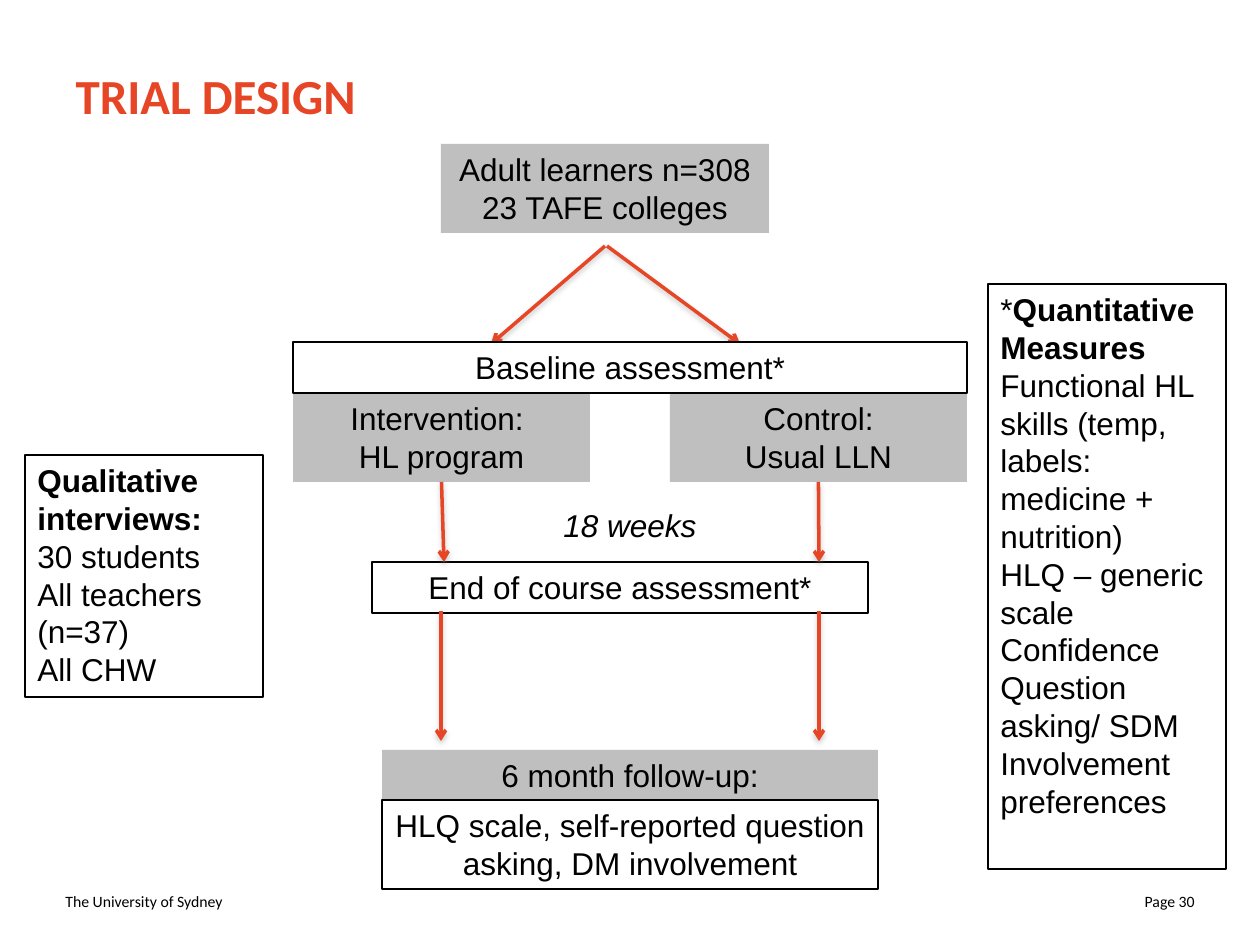
import pptx
import pptx.util
import pptx.dml.color
import pptx.enum.shapes
import pptx.enum.text
import pptx.oxml

EMU_PER_PX = 914400 / 126
ORANGE, GREY, WHITE, BLACK = "E64626", "BFBFBF", "FFFFFF", "000000"
LEFT, CENTER, RIGHT = (pptx.enum.text.PP_ALIGN.LEFT, pptx.enum.text.PP_ALIGN.CENTER,
                       pptx.enum.text.PP_ALIGN.RIGHT)
NAMESPACE = 'xmlns:a="http://schemas.openxmlformats.org/drawingml/2006/main"'
ARROW_SHADOW = (
    f'<a:effectLst {NAMESPACE}><a:outerShdw blurRad="39400" dist="20300" dir="5400000" '
    'rotWithShape="0"><a:srgbClr val="808080"><a:alpha val="38000"/></a:srgbClr>'
    '</a:outerShdw></a:effectLst>')


def px(length):
    return pptx.util.Emu(round(length * EMU_PER_PX))


def color(value):
    return pptx.dml.color.RGBColor.from_string(value)


def add_run(paragraph, text, size=18, font="Arial", ink=BLACK, bold=False, italic=False):
    run = paragraph.add_run()
    run.text = text
    run.font.size = pptx.util.Pt(size)
    run.font.name = font
    run.font.bold = bold
    run.font.italic = italic
    run.font.color.rgb = color(ink)


def fill_text(frame, paragraphs, align=LEFT, anchor=pptx.enum.text.MSO_ANCHOR.TOP, **style):
    """Each paragraph is a string or a list of (text, run style) pairs."""
    frame.word_wrap = True
    frame.vertical_anchor = anchor
    for index, content in enumerate(paragraphs):
        paragraph = frame.add_paragraph() if index else frame.paragraphs[0]
        paragraph.alignment = align
        runs = [(content, {})] if isinstance(content, str) else content
        for text, run_style in runs:
            add_run(paragraph, text, **{**style, **run_style})


def add_title(slide, text):
    title = slide.shapes.title
    title.left, title.top, title.width, title.height = px(63), px(16), px(1134), px(158)
    fill_text(title.text_frame, [text], anchor=pptx.enum.text.MSO_ANCHOR.MIDDLE,
              size=28, font="Calibri", ink=ORANGE, bold=True)


def add_box(slide, bounds, paragraphs, fill=None, outlined=True, align=CENTER):
    shape = slide.shapes.add_shape(pptx.enum.shapes.MSO_SHAPE.RECTANGLE, *map(px, bounds))
    shape.shadow.inherit = False
    if fill:
        shape.fill.solid()
        shape.fill.fore_color.rgb = color(fill)
    else:
        shape.fill.background()
    if outlined:
        shape.line.color.rgb = color(BLACK)
        shape.line.width = pptx.util.Pt(0.75)
    else:
        shape.line.fill.background()
    fill_text(shape.text_frame, paragraphs, align)
    return shape


def add_label(slide, bounds, text, **style):
    label = slide.shapes.add_textbox(*map(px, bounds))
    fill_text(label.text_frame, [text], **style)


def add_arrow(slide, start, end, source=None):
    arrow = slide.shapes.add_connector(
        pptx.enum.shapes.MSO_CONNECTOR.STRAIGHT, *map(px, start + end))
    if source is not None:
        arrow.begin_connect(source, 2)
    arrow.line.color.rgb = color(ORANGE)
    arrow.line.width = pptx.util.Pt(2)
    arrow.line._get_or_add_ln().append(
        pptx.oxml.parse_xml(f'<a:tailEnd {NAMESPACE} type="arrow"/>'))
    arrow._element.spPr.append(pptx.oxml.parse_xml(ARROW_SHADOW))


def main():
    presentation = pptx.Presentation()
    presentation.slide_width, presentation.slide_height = px(1260), px(945)
    slide = presentation.slides.add_slide(presentation.slide_layouts[5])

    # Title and footer
    add_title(slide, "TRIAL DESIGN")
    for left, text, align in ((53, "The University of Sydney", LEFT), (914, "Page 30", RIGHT)):
        add_label(slide, (left, 876, 293, 50), text, align=align, size=9, font="Calibri",
                  anchor=pptx.enum.text.MSO_ANCHOR.MIDDLE)

    # Participants, trial arms and assessments
    add_box(slide, (441, 144, 328, 89), ["Adult learners n=308", "23 TAFE colleges"],
            GREY, outlined=False)
    intervention = add_box(slide, (293, 393, 297, 89), ["Intervention: ", "HL program"],
                           GREY, outlined=False)
    control = add_box(slide, (670, 393, 297, 89), ["Control:", "Usual LLN"],
                      GREY, outlined=False)
    add_box(slide, (372, 562, 496, 51), ["End of course assessment*"], WHITE)
    add_box(slide, (382, 750, 496, 50), ["6 month follow-up:"], GREY, outlined=False)

    # Flow arrows
    add_arrow(slide, (605, 246), (491, 344))
    add_arrow(slide, (607, 246), (740, 344))
    add_arrow(slide, (441, 482), (444, 562), intervention)
    add_arrow(slide, (818, 482), (819, 562), control)
    for x in (441, 819):
        add_arrow(slide, (x, 611), (x, 741))

    # Outcome measures
    add_box(slide, (988, 284, 238, 585), [
        [("*", {}), ("Quantitative Measures", {"bold": True})],
        "Functional HL skills (temp, labels: medicine + nutrition)",
        "HLQ – generic scale",
        "Confidence",
        "Question asking/ SDM",
        "Involvement preferences",
    ], align=LEFT)
    add_box(slide, (382, 800, 496, 89),
            ["HLQ scale, self-reported question asking, DM involvement"])
    add_box(slide, (293, 342, 674, 51), ["Baseline assessment*"], WHITE)
    add_box(slide, (25, 455, 238, 242), [
        [("Qualitative interviews:", {"bold": True})],
        "30 students",
        "All teachers (n=37)",
        "All CHW",
    ], align=LEFT)

    # Course duration
    add_label(slide, (551, 500, 169, 50), "18 weeks", italic=True)

    presentation.save("out.pptx")


if __name__ == "__main__":
    main()
